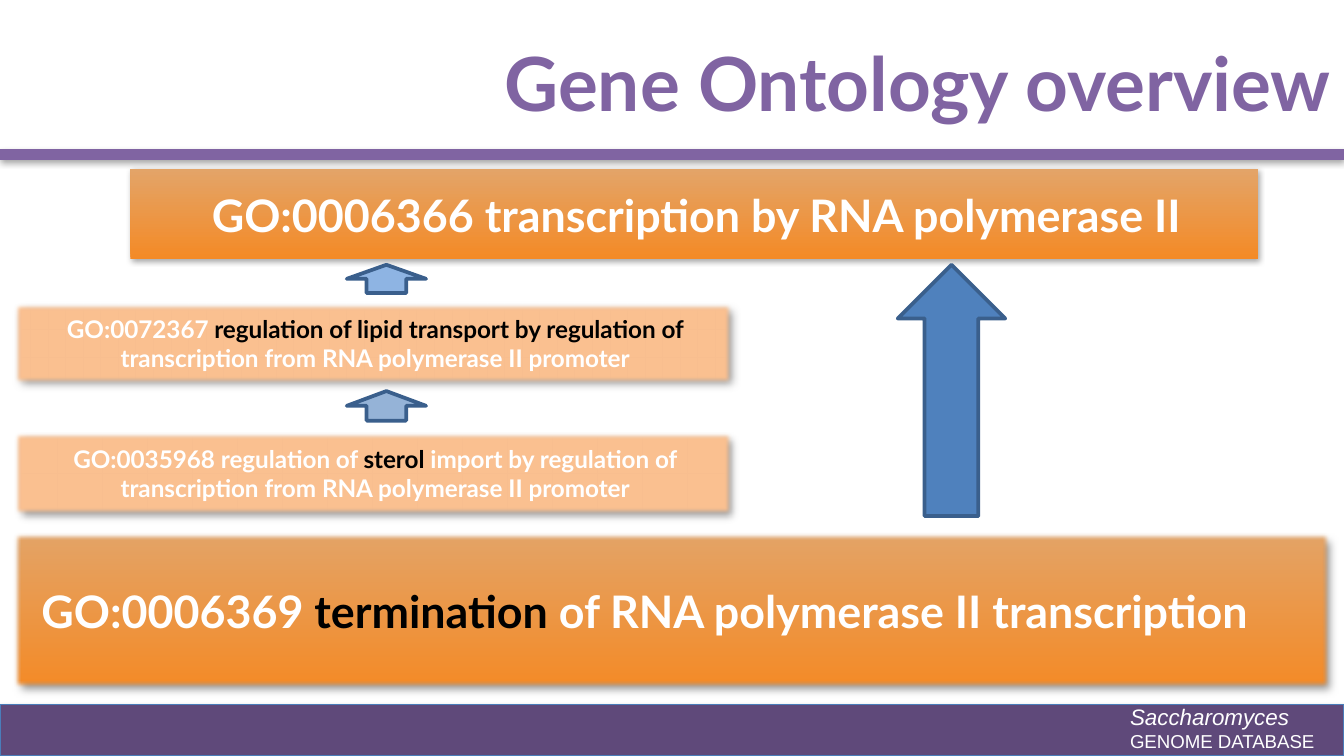
from lxml import etree
from pptx import Presentation
from pptx.dml.color import RGBColor
from pptx.enum.shapes import MSO_SHAPE
from pptx.enum.text import MSO_ANCHOR, MSO_AUTO_SIZE, PP_ALIGN
from pptx.oxml.ns import qn
from pptx.util import Inches, Pt

RECTANGLE, UP_ARROW = MSO_SHAPE.RECTANGLE, MSO_SHAPE.UP_ARROW
LEFT, CENTER, RIGHT = PP_ALIGN.LEFT, PP_ALIGN.CENTER, PP_ALIGN.RIGHT
MIDDLE = MSO_ANCHOR.MIDDLE
FIXED_SIZE = MSO_AUTO_SIZE.NONE

COLORS = {
    "white": "FFFFFF", "black": "000000",
    "purple": "8064A2", "footer": "5F497A", "footer line": "4A7DBA",
    "orange": "F48A26", "tan": "E3A468", "peach": "FAC090",
    "arrow": "4F81BD", "sky arrow": "8EB4E3", "grey arrow": "95B3D7",
    "arrow line": "3A5F8C",
}
# Opacity in percent, blur and distance in points, angle in degrees
BAR_SHADOW = (35, 3.1, 1.8, 90)
ROOT_SHADOW = (35, 3, 1, 45)
TERM_SHADOW = (40, 4, 3, 45)
GRADIENT = ("orange", "tan")


def color(name):
    return RGBColor.from_string(COLORS[name])


class SlideBuilder:
    font = "Lato"
    text_indent = 0.03
    soft_edge = 2.5

    def __init__(self, slide):
        self.slide = slide

    def add_span(self, para, text, size, color_name, font=font, bold=True, italic=False):
        span = para.add_run()
        span.text = text
        span.font.name = font
        span.font.size = Pt(size)
        span.font.bold = bold
        span.font.italic = italic
        span.font.color.rgb = color(color_name)

    def add_title(self, text, left, top, width, height):
        title = self.slide.shapes.title
        title.left, title.top = Inches(left), Inches(top)
        title.width, title.height = Inches(width), Inches(height)
        frame = title.text_frame
        frame.auto_size = FIXED_SIZE
        frame.vertical_anchor = MIDDLE
        para = frame.paragraphs[0]
        para.alignment = RIGHT
        self.add_span(para, text, 40, "purple")

    def add_shadow(self, shape, opacity, blur, distance, angle):
        effects = shape._element.spPr.find(qn("a:effectLst"))
        outer = etree.SubElement(
            effects, qn("a:outerShdw"), blurRad=str(Pt(blur)), dist=str(Pt(distance)),
            dir=str(angle * 60000), algn="ctr", rotWithShape="0")
        shade = etree.SubElement(outer, qn("a:srgbClr"), val=COLORS["black"])
        etree.SubElement(shade, qn("a:alpha"), val=str(opacity * 1000))

    def soften_edge(self, shape):
        effects = shape._element.spPr.find(qn("a:effectLst"))
        etree.SubElement(effects, qn("a:softEdge"), rad=str(Pt(self.soft_edge)))

    def add_shape(self, kind, left, top, width, height, fill, line=None, shadow=None):
        """Draw a preset shape; fill is a colour name or a pair from bottom to top."""
        shape = self.slide.shapes.add_shape(
            kind, Inches(left), Inches(top), Inches(width), Inches(height))
        if isinstance(fill, tuple):
            shape.fill.gradient()
            shape.fill.gradient_angle = 90
            for stop, name in zip(shape.fill.gradient_stops, fill):
                stop.color.rgb = color(name)
        else:
            shape.fill.solid()
            shape.fill.fore_color.rgb = color(fill)
        if line:
            line_color, line_width = line
            shape.line.color.rgb = color(line_color)
            shape.line.width = Pt(line_width)
        else:
            shape.line.fill.background()
        shape.shadow.inherit = False
        if shadow:
            self.add_shadow(shape, *shadow)
        return shape

    def add_term(self, spans, left, top, width, height, fill, size,
                 shadow=TERM_SHADOW, align=CENTER, indent=text_indent, soft=True):
        box = self.add_shape(RECTANGLE, left, top, width, height, fill, shadow=shadow)
        if soft:
            self.soften_edge(box)
        frame = box.text_frame
        frame.word_wrap = True
        frame.vertical_anchor = MIDDLE
        para = frame.paragraphs[0]
        para.alignment = align
        para._p.get_or_add_pPr().set("marL", str(Inches(indent)))
        for text, color_name in spans:
            self.add_span(para, text, size, color_name)

    def add_arrow(self, left, top, width, height, fill):
        self.add_shape(UP_ARROW, left, top, width, height, fill, line=("arrow line", 2))

    def add_footer(self):
        self.add_shape(RECTANGLE, 0, 5.24, 10, 0.38, "footer",
                       line=("footer line", 0.75), shadow=BAR_SHADOW)
        box = self.slide.shapes.add_textbox(
            Inches(8.31), Inches(5.18), Inches(2.14), Inches(0.47))
        frame = box.text_frame
        frame.word_wrap = True
        self.add_span(frame.paragraphs[0], "Saccharomyces", 12, "white",
                      font="Arial", bold=False, italic=True)
        self.add_span(frame.add_paragraph(), "GENOME DATABASE", 10, "white",
                      font="Arial", bold=False)


def main():
    deck = Presentation()
    deck.slide_width = Inches(10)
    deck.slide_height = Inches(10 * 9 / 16)
    page = SlideBuilder(deck.slides.add_slide(deck.slide_layouts[5]))

    page.add_footer()
    page.add_title("Gene Ontology overview", 0, 0.02, 10, 1.17)
    page.add_shape(RECTANGLE, 0, 1.11, 10, 0.08, "purple", shadow=BAR_SHADOW)

    page.add_term([("GO:0006366 transcription by RNA polymerase II", "white")],
                  0.97, 1.26, 8.39, 0.67, GRADIENT, 24, shadow=ROOT_SHADOW, soft=False)
    page.add_term([("GO:0035968 regulation of ", "white"),
                   ("sterol", "black"),
                   (" import by regulation of transcription from RNA polymerase II promoter",
                    "white")],
                  0.1, 3.21, 5.35, 0.63, "peach", 13)
    page.add_arrow(6.68, 1.97, 0.8, 1.87, "arrow")
    page.add_term([("GO:0006369 ", "white"),
                   ("termination", "black"),
                   (" of RNA polymerase II transcription", "white")],
                  0.1, 3.96, 9.79, 1.16, GRADIENT, 24, align=LEFT, indent=0.11)
    page.add_term([("GO:0072367 ", "white"),
                   ("regulation of lipid transport by regulation of ", "black"),
                   ("transcription from RNA polymerase II promoter", "white")],
                  0.1, 2.25, 5.35, 0.61, "peach", 13)
    page.add_arrow(2.58, 1.97, 0.59, 0.21, "sky arrow")
    page.add_arrow(2.58, 2.91, 0.59, 0.22, "grey arrow")

    deck.save("out.pptx")


if __name__ == "__main__":
    main()
